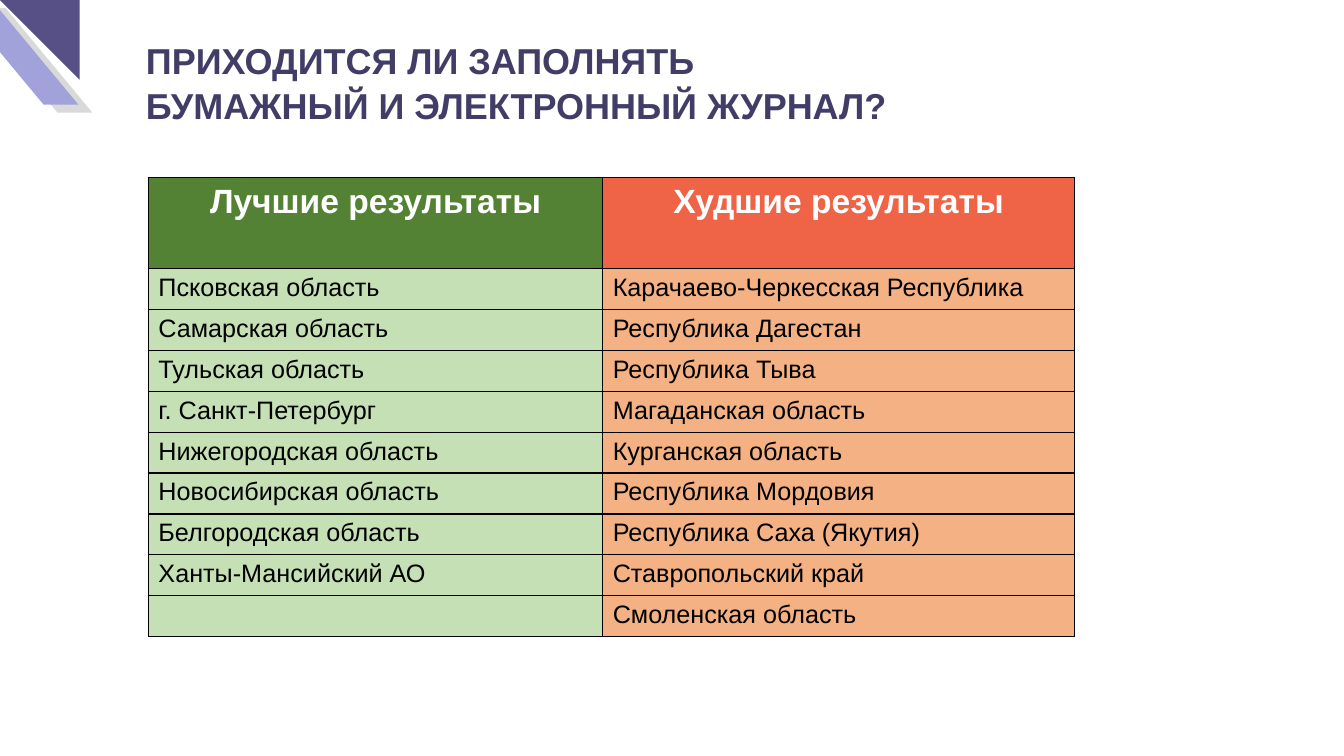
import pptx
import pptx.dml.color
import pptx.enum.shapes
import pptx.enum.text
import pptx.oxml
import pptx.util
from pptx.oxml.ns import nsdecls

Cm, Pt = pptx.util.Cm, pptx.util.Pt
SHAPES = pptx.enum.shapes.MSO_SHAPE
ALIGN = pptx.enum.text.PP_ALIGN

TITLE = "ПРИХОДИТСЯ ЛИ ЗАПОЛНЯТЬ БУМАЖНЫЙ И ЭЛЕКТРОННЫЙ ЖУРНАЛ?"
# Per column: heading, heading fill, body fill, width in cm, regions
COLUMNS = [
    ("Лучшие результаты", "548235", "C5E0B4", 11.45, [
        "Псковская область", "Самарская область", "Тульская область",
        "г. Санкт-Петербург", "Нижегородская область",
        "Новосибирская область", "Белгородская область",
        "Ханты-Мансийский АО"]),
    ("Худшие результаты", "EF6347", "F4B183", 11.89, [
        "Карачаево-Черкесская Республика", "Республика Дагестан",
        "Республика Тыва", "Магаданская область", "Курганская область",
        "Республика Мордовия", "Республика Саха (Якутия)",
        "Ставропольский край", "Смоленская область"]),
]
# Preset, left, top, width, height in cm, fill, flip attributes
CORNER = [
    (SHAPES.PARALLELOGRAM, -0.74, 0.2, 3.07, 2.64, "D9D9D9", ["flipH"]),
    (SHAPES.PARALLELOGRAM, -1.09, 0, 3.07, 2.64, "A2A2DA", ["flipH"]),
    (SHAPES.RIGHT_TRIANGLE, 0, 0, 2.01, 2.01, "565087", ["flipH", "flipV"]),
]
HEADER_HEIGHT, ROW_HEIGHT = 2.29, 1.03


def paint(color_format, color):
    color_format.rgb = pptx.dml.color.RGBColor.from_string(color)


def style_paragraph(paragraph, size, color, bold):
    paragraph.font.name = "Arial"
    paragraph.font.size = Pt(size)
    paragraph.font.bold = bold
    paint(paragraph.font.color, color)


def add_corner_shape(slide, preset, left, top, width, height, color, flips):
    shape = slide.shapes.add_shape(
        preset, Cm(left), Cm(top), Cm(width), Cm(height))
    if preset == SHAPES.PARALLELOGRAM:
        shape.adjustments[0] = 0.83
    for flip in flips:
        shape.element.spPr.find(pptx.oxml.ns.qn("a:xfrm")).set(flip, "1")
    shape.shadow.inherit = False
    shape.fill.solid()
    paint(shape.fill.fore_color, color)
    shape.line.fill.background()


def fill_cell(cell, text, fill, size, color, bold, alignment):
    cell.text_frame.text = text
    paragraph = cell.text_frame.paragraphs[0]
    paragraph.alignment = alignment
    style_paragraph(paragraph, size, color, bold)
    properties = cell._tc.get_or_add_tcPr()
    for side in ("lnL", "lnR", "lnT", "lnB"):
        properties.append(pptx.oxml.parse_xml(
            f'<a:{side} {nsdecls("a")} w="12700"><a:solidFill>'
            f'<a:srgbClr val="000000"/></a:solidFill></a:{side}>'))
    cell.fill.solid()
    paint(cell.fill.fore_color, fill)


def add_results_table(slide):
    row_count = max(len(column[-1]) for column in COLUMNS)
    total_width = sum(column[3] for column in COLUMNS)
    total_height = HEADER_HEIGHT + row_count * ROW_HEIGHT
    table = slide.shapes.add_table(
        row_count + 1, len(COLUMNS), Cm(3.74), Cm(4.48),
        Cm(total_width), Cm(total_height)).table
    for index, row in enumerate(table.rows):
        row.height = Cm(ROW_HEIGHT if index else HEADER_HEIGHT)
    for index, (heading, dark, light, width, regions) in enumerate(COLUMNS):
        table.columns[index].width = Cm(width)
        fill_cell(table.cell(0, index), heading, dark,
                  24, "FFFFFF", True, ALIGN.CENTER)
        for row in range(row_count):
            region = regions[row] if row < len(regions) else ""
            fill_cell(table.cell(row + 1, index), region, light,
                      18, "000000", False, ALIGN.LEFT)


def add_title(slide):
    box = slide.shapes.add_textbox(Cm(3.43), Cm(0.81), Cm(19.91), Cm(2.44))
    box.text_frame.word_wrap = True
    box.text_frame.text = TITLE
    paragraph = box.text_frame.paragraphs[0]
    paragraph.line_spacing = 1.04
    style_paragraph(paragraph, 25.7, "423D67", True)


def main():
    presentation = pptx.Presentation()
    presentation.slide_width = Cm(33.87)
    presentation.slide_height = Cm(19.05)
    slide = presentation.slides.add_slide(presentation.slide_layouts[6])
    for corner_shape in CORNER:
        add_corner_shape(slide, *corner_shape)
    add_results_table(slide)
    add_title(slide)
    presentation.save("out.pptx")


if __name__ == "__main__":
    main()
